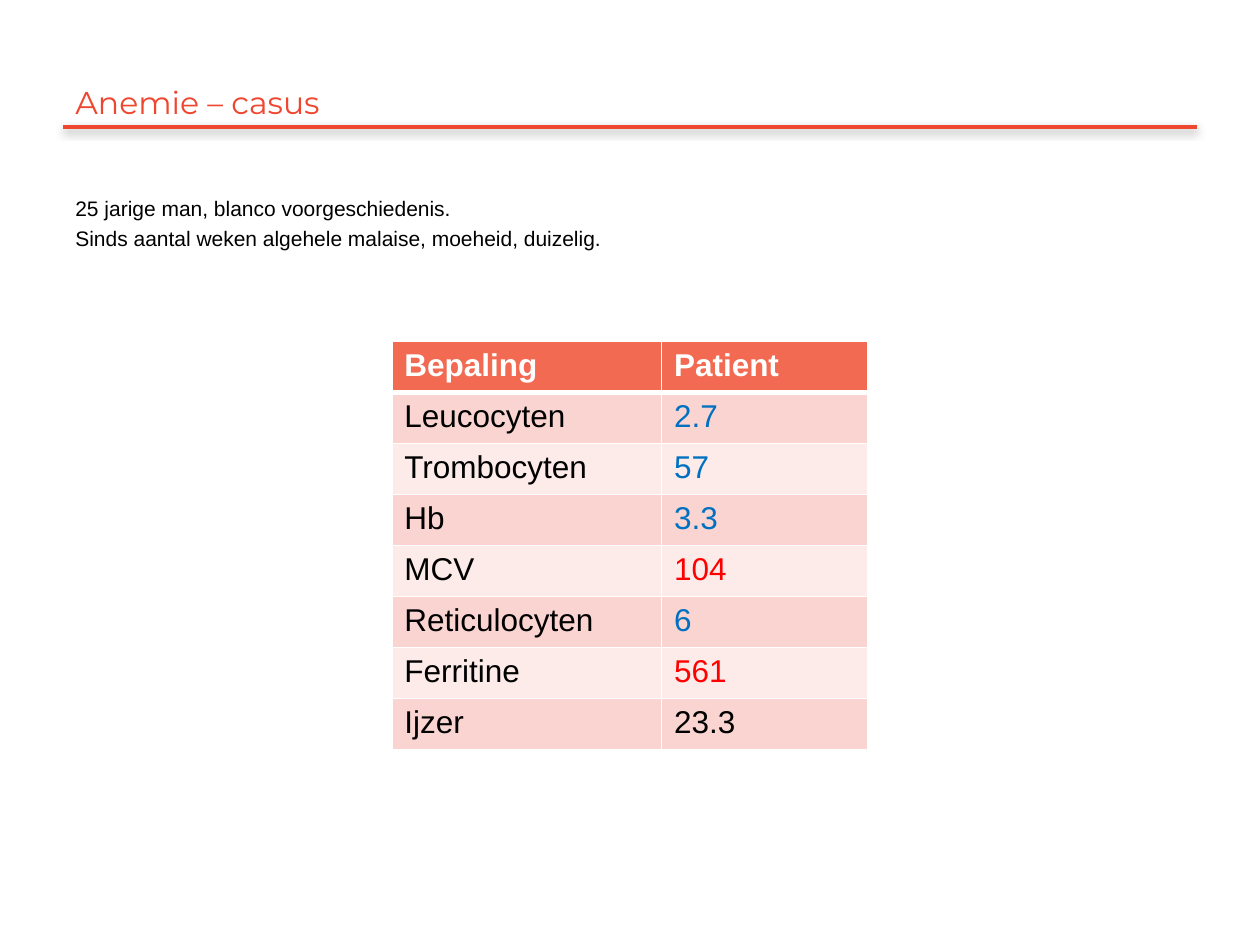
from dataclasses import dataclass

from lxml import etree
from pptx import Presentation
from pptx.dml.color import RGBColor
from pptx.enum.shapes import MSO_CONNECTOR
from pptx.enum.text import MSO_ANCHOR
from pptx.oxml import parse_xml
from pptx.oxml.ns import nsdecls, qn
from pptx.util import Inches, Pt

STRAIGHT = MSO_CONNECTOR.STRAIGHT
BOTTOM = MSO_ANCHOR.BOTTOM


@dataclass(frozen=True)
class Theme:
    """Colours, fonts and type sizes of the slide."""
    accent: str = "EF4630"
    header: str = "F26A51"
    bands: tuple = ("FAD4D0", "FCEBE9")
    white: str = "FFFFFF"
    black: str = "000000"
    low: str = "0070C0"
    high: str = "FF0000"
    title_font: str = "Montserrat"
    body_font: str = "Arial"
    title_size: int = 18
    body_size: int = 12
    table_size: int = 18


THEME = Theme()

HISTORY = [
    "25 jarige man, blanco voorgeschiedenis.",
    "Sinds aantal weken algehele malaise, moeheid, duizelig.",
]
HEADINGS = ("Bepaling", "Patient")
RESULTS = [
    ("Leucocyten", "2.7", THEME.low),
    ("Trombocyten", "57", THEME.low),
    ("Hb", "3.3", THEME.low),
    ("MCV", "104", THEME.high),
    ("Reticulocyten", "6", THEME.low),
    ("Ferritine", "561", THEME.high),
    ("Ijzer", "23.3", THEME.black),
]


def set_font(p, name, size, color, bold=False):
    """Set the font of a whole paragraph."""
    p.font.name = name
    p.font.size = Pt(size)
    p.font.bold = bold
    p.font.color.rgb = RGBColor.from_string(color)


def add_text_frame(slide, x, y, w, h):
    """Add a wrapping text box and return its frame."""
    tf = slide.shapes.add_textbox(x, y, w, h).text_frame
    tf.word_wrap = True
    return tf


def add_title(slide, text, x, y, w, h):
    """Add the title with a shadowed rule along the bottom of its box."""
    rule = slide.shapes.add_connector(STRAIGHT, x, y + h, x + w, y + h)
    rule.line.color.rgb = RGBColor.from_string(THEME.accent)
    rule.line.width = Pt(2)
    rule._element.spPr.append(parse_xml(
        f'<a:effectLst {nsdecls("a")}>'
        f'<a:outerShdw blurRad="{Pt(5)}" dist="{Pt(1.6)}" dir="5400000" rotWithShape="0">'
        f'<a:srgbClr val="{THEME.black}"><a:alpha val="38000"/></a:srgbClr>'
        '</a:outerShdw></a:effectLst>'))
    tf = add_text_frame(slide, x, y, w, h)
    tf.vertical_anchor = BOTTOM
    p = tf.paragraphs[0]
    p.text = text
    set_font(p, THEME.title_font, THEME.title_size, THEME.accent)


def add_history(slide, lines, x, y, w, h):
    """Add the case history, one paragraph per line."""
    tf = add_text_frame(slide, x, y, w, h)
    for i, line in enumerate(lines):
        p = tf.add_paragraph() if i else tf.paragraphs[0]
        p.text = line
        p.space_before = Pt(2.8 if i else 0)
        set_font(p, THEME.body_font, THEME.body_size, THEME.black)


def add_border(cell, side, width):
    """Add a white border on one side of a cell."""
    tc_pr = cell._tc.get_or_add_tcPr()
    ln = etree.SubElement(tc_pr, qn(f"a:ln{side}"), w=str(Pt(width)))
    fill = etree.SubElement(ln, qn("a:solidFill"))
    etree.SubElement(fill, qn("a:srgbClr"), val=THEME.white)


def style_cell(cell, text, color, fill, header, below_header):
    """Fill in one cell with its text, borders and background."""
    widths = {"L": 1, "R": 1, "T": 3 if below_header else 1, "B": 3 if header else 1}
    for side, width in widths.items():
        add_border(cell, side, width)
    cell.fill.solid()
    cell.fill.fore_color.rgb = RGBColor.from_string(fill)
    p = cell.text_frame.paragraphs[0]
    p.text = text
    set_font(p, THEME.body_font, THEME.table_size, color, header)


def add_results(slide, x, y, w, h):
    """Add the table of laboratory results."""
    rows = [(*HEADINGS, THEME.white), *RESULTS]
    table = slide.shapes.add_table(len(rows), len(HEADINGS), x, y, w, h).table
    table.columns[0].width = Inches(2.14)
    table.columns[1].width = w - Inches(2.14)
    for i, (name, value, value_color) in enumerate(rows):
        header = i == 0
        fill = THEME.header if header else THEME.bands[(i - 1) % 2]
        name_color = THEME.white if header else THEME.black
        for j, (text, color) in enumerate([(name, name_color), (value, value_color)]):
            style_cell(table.cell(i, j), text, color, fill, header, i == 1)


def main():
    """Build and save the slide."""
    prs = Presentation()
    prs.slide_width, prs.slide_height = Inches(10), Inches(7.5)
    slide = prs.slides.add_slide(prs.slide_layouts[6])
    left, width = Inches(0.5), Inches(9)
    add_title(slide, "Anemie – casus", left, Inches(0.3), width, Inches(0.71))
    add_history(slide, HISTORY, left, Inches(1.5), width, Inches(5.18))
    add_results(slide, Inches(3.11), Inches(2.71), Inches(3.78), Inches(3.24))
    prs.save("out.pptx")


if __name__ == "__main__":
    main()
